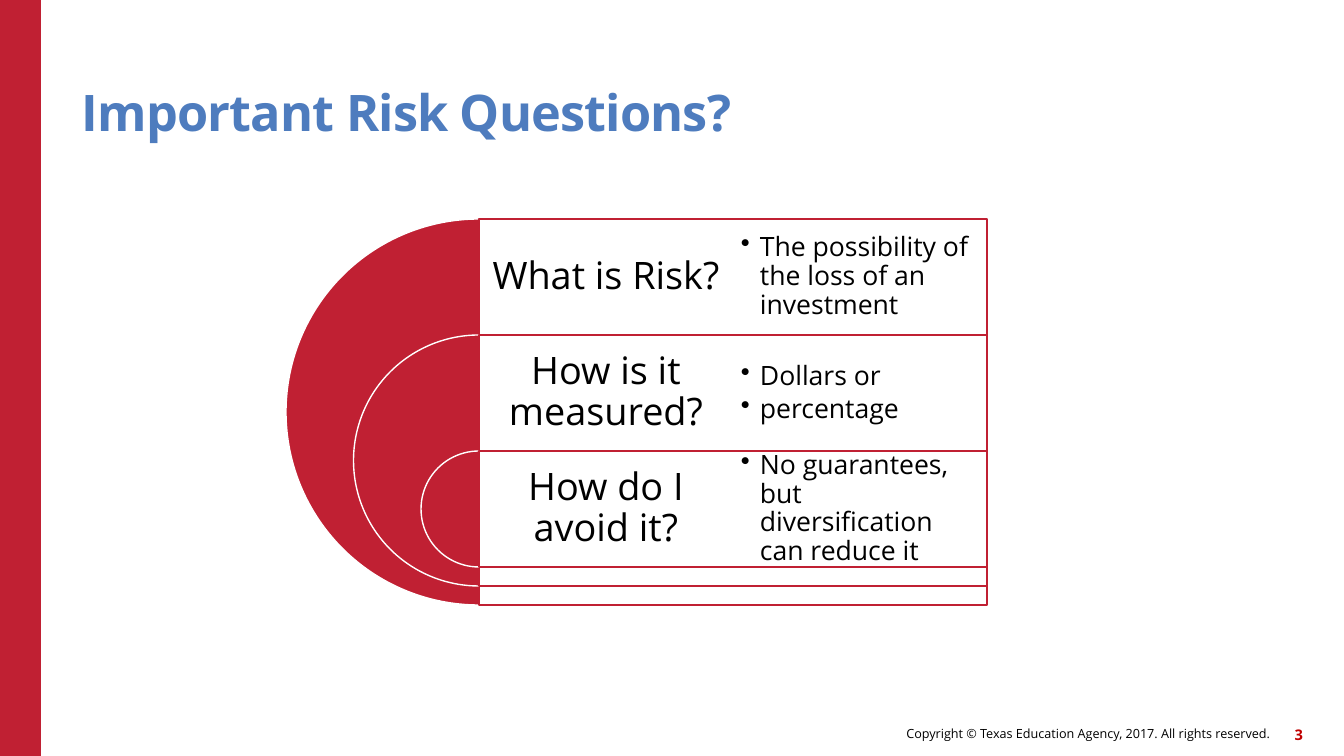
"""Build the risk questions slide with its nested half-circle diagram."""
from lxml.etree import SubElement
from pptx import Presentation
from pptx.dml.color import RGBColor
from pptx.enum.shapes import MSO_SHAPE
from pptx.enum.text import MSO_ANCHOR, MSO_AUTO_SIZE, PP_ALIGN
from pptx.oxml.ns import qn
from pptx.util import Pt

TITLE = "Important Risk Questions?"
QUESTIONS = [
    ("What is Risk?", ["The possibility of the loss of an investment"]),
    ("How is it measured?", ["Dollars or", "percentage"]),
    ("How do I avoid it?", ["No guarantees, but diversification can reduce it"]),
]
COPYRIGHT = "Copyright © Texas Education Agency, 2017. All rights reserved."
PAGE = "3"

COLORS = {"red": "C02033", "blue": "4E7CBE", "page": "C00000",
          "text": "000000", "white": "FFFFFF"}
FONT = "Open Sans"
SCALE = 914400 / 100.8
CENTER_X, TOP, ROW, COLUMN = 479, 219, 116, 254
OUTER, SHRINK = 386, 135
INDENT = 19


def emu(px):
    return round(px * SCALE)


def box(left, top, width, height):
    return [emu(px) for px in (left, top, width, height)]


def add_filled(shapes, kind, place, fill, line=None):
    shape = shapes.add_shape(kind, *box(*place))
    shape.shadow.inherit = False
    shape.fill.solid()
    shape.fill.fore_color.rgb = RGBColor.from_string(COLORS[fill])
    if line:
        shape.line.color.rgb = RGBColor.from_string(COLORS[line])
        shape.line.width = Pt(1)
    else:
        shape.line.fill.background()
    return shape


def make_transparent(shape, percent):
    color = shape.fill._xPr.find(qn("a:solidFill"))[0]
    SubElement(color, qn("a:alpha")).set("val", str(percent * 1000))


def write(shape, lines, size, color="text", bold=False, align=PP_ALIGN.LEFT,
          anchor=MSO_ANCHOR.MIDDLE, inset=0, spacing=0.9, after=0, bullet=False):
    frame = shape.text_frame
    frame.word_wrap = True
    frame.auto_size = MSO_AUTO_SIZE.NONE
    frame.vertical_anchor = anchor
    frame.margin_left = frame.margin_right = emu(inset)
    frame.margin_top = frame.margin_bottom = emu(inset)
    for index, line in enumerate(lines):
        paragraph = frame.add_paragraph() if index else frame.paragraphs[0]
        paragraph.alignment = align
        paragraph.line_spacing = spacing
        paragraph.space_before = Pt(0)
        paragraph.space_after = Pt(after)
        if bullet:
            paragraph.level = 1
            properties = paragraph._p.get_or_add_pPr()
            properties.set("marL", str(emu(INDENT)))
            properties.set("indent", str(-emu(INDENT)))
            SubElement(properties, qn("a:buChar")).set("char", "•")
        run = paragraph.add_run()
        run.text = line
        run.font.name = FONT
        run.font.size = Pt(size)
        run.font.bold = bold
        run.font.color.rgb = RGBColor.from_string(COLORS[color])


def add_text(shapes, place, lines, size, **style):
    write(shapes.add_textbox(*box(*place)), lines, size, **style)


def add_diagram(slide):
    diagram = slide.shapes.add_group_shape().shapes
    for index, (question, _) in enumerate(QUESTIONS):
        top = TOP + index * ROW
        diameter = OUTER - index * SHRINK
        pie = add_filled(diagram, MSO_SHAPE.PIE,
                         (CENTER_X - diameter / 2, top, diameter, diameter),
                         "red", "white")
        pie.adjustments[0], pie.adjustments[1] = 54, 162
        panel = add_filled(diagram, MSO_SHAPE.RECTANGLE,
                           (CENTER_X, top, 2 * COLUMN, diameter), "white", "red")
        make_transparent(panel, 90)
        add_text(diagram, (CENTER_X, top, COLUMN, ROW), [question], 27,
                 align=PP_ALIGN.CENTER, inset=11, after=9)
    for index, (_, answers) in enumerate(QUESTIONS):
        add_text(diagram, (CENTER_X + COLUMN, TOP + index * ROW, COLUMN, ROW),
                 answers, 19, inset=8, after=3, bullet=True)


def main():
    deck = Presentation()
    deck.slide_width, deck.slide_height = emu(1344), emu(756)
    slide = deck.slides.add_slide(deck.slide_layouts[5])
    add_filled(slide.shapes, MSO_SHAPE.RECTANGLE, (0, 0, 41, 756), "red")
    add_text(slide.shapes, (619, 718, 651, 32), [COPYRIGHT], 9,
             align=PP_ALIGN.RIGHT, spacing=1.0)
    add_text(slide.shapes, (1261, 719, 42, 32), [PAGE], 10.5, color="page",
             bold=True, align=PP_ALIGN.RIGHT, spacing=1.0)
    title = slide.shapes.title
    title.left, title.top, title.width, title.height = box(82, 45, 1109, 97)
    write(title, [TITLE], 36, color="blue", bold=True, anchor=MSO_ANCHOR.BOTTOM)
    title.text_frame.paragraphs[0].runs[0].font._element.set("spc", "-60")
    add_diagram(slide)
    deck.save("out.pptx")


if __name__ == "__main__":
    main()
